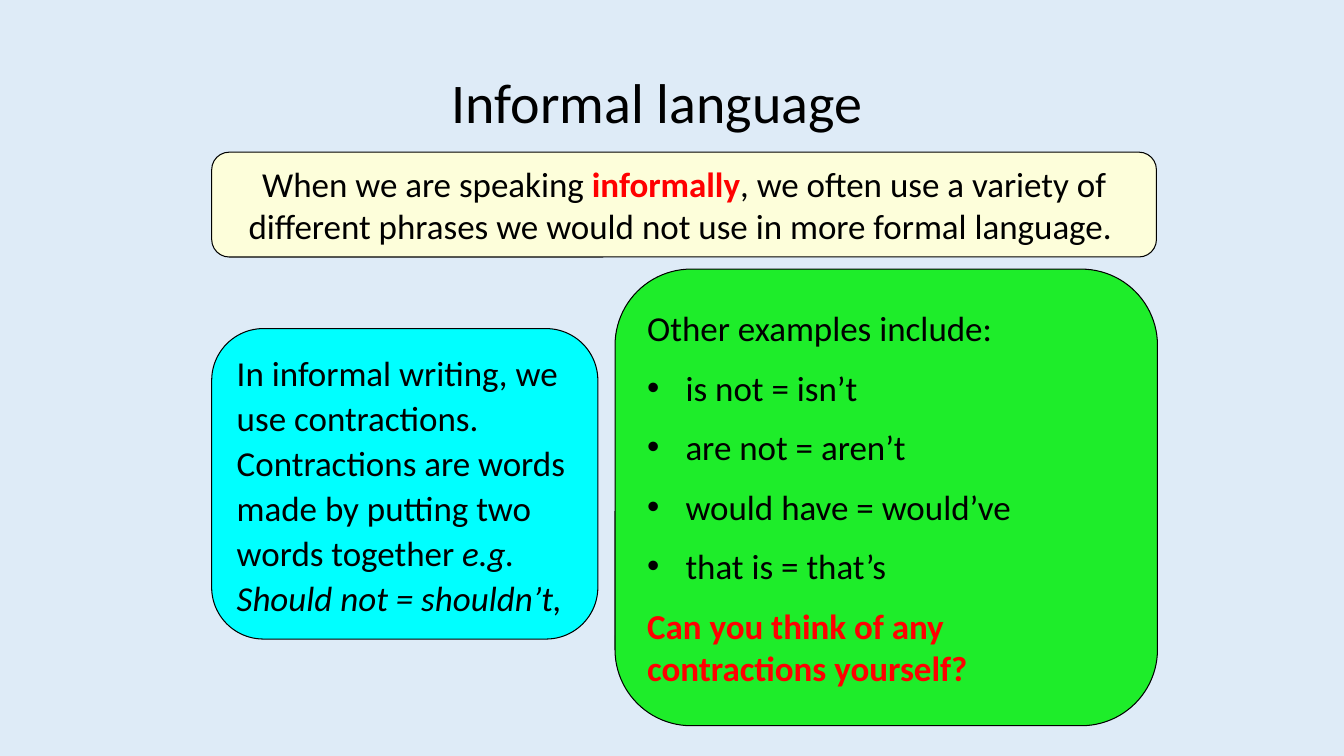
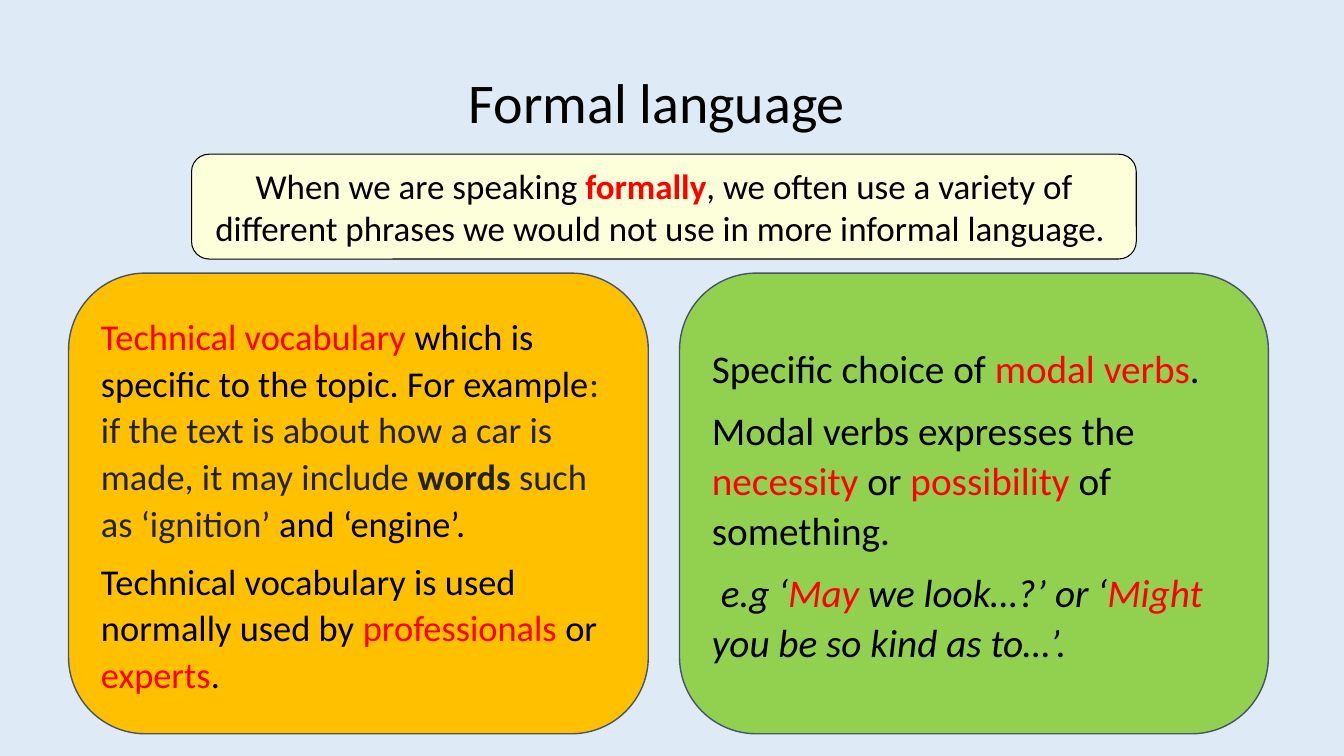
from lxml import etree
from pptx import Presentation
from pptx.dml.color import RGBColor
from pptx.enum import shapes, text
from pptx.oxml import ns
from pptx.util import Inches, Pt

COLOURS = {
    "background": "DEEBF7", "text": "000000", "accent": "FF0000", "grey": "222222",
    "slate": "44546A", "cream": "FDFEDA", "cyan": "00FFFF", "green": "1EED2A",
    "amber": "FFC000", "lime": "92D050",
}
FONT = "Calibri"


def colour(name):
    return RGBColor.from_string(COLOURS[name])


class Deck:
    """Holds the shared style and the slide being built."""

    def __init__(self):
        self.presentation = Presentation()
        self.presentation.slide_width = Inches(13.33)
        self.presentation.slide_height = Inches(7.5)
        background = self.presentation.slide_master.background.fill
        background.solid()
        background.fore_color.rgb = colour("background")
        self.slide = None

    def start_slide(self, title):
        self.slide = self.presentation.slides.add_slide(self.presentation.slide_layouts[6])
        box = self.slide.shapes.add_textbox(
            Inches(2.97), Inches(-0.25), Inches(7.09), Inches(1.64))
        box.text_frame.word_wrap = True
        box.text_frame.vertical_anchor = text.MSO_ANCHOR.BOTTOM
        paragraph = box.text_frame.paragraphs[0]
        paragraph.alignment = text.PP_ALIGN.CENTER
        self.add_runs(paragraph, [title], 40)

    def add_runs(self, paragraph, runs, size):
        """Each run is plain text or (text, colour name, style letters b and i)."""
        for item in runs:
            words, colour_name, style = (item, "text", "") if isinstance(item, str) else item
            run = paragraph.add_run()
            run.text = words
            run.font.name = FONT
            run.font.size = Pt(size)
            run.font.bold = "b" in style
            run.font.italic = "i" in style
            run.font.color.rgb = colour(colour_name)

    def add_bullet(self, paragraph):
        properties = paragraph._p.get_or_add_pPr()
        properties.set("marL", str(Inches(0.38)))
        properties.set("indent", str(-Inches(0.38)))
        etree.SubElement(properties, ns.qn("a:buFont")).set("typeface", "Arial")
        etree.SubElement(properties, ns.qn("a:buChar")).set("char", "•")

    def add_panel(self, place, fill, paragraphs, size=25, line=("text", 0.75), before=0,
                  after=0, spacing=1.0, align=text.PP_ALIGN.LEFT, bullets=()):
        """Add a rounded panel; bullets lists the indexes of bulleted paragraphs."""
        shape = self.slide.shapes.add_shape(
            shapes.MSO_SHAPE.ROUNDED_RECTANGLE, *map(Inches, place))
        shape.shadow.inherit = False
        shape.fill.solid()
        shape.fill.fore_color.rgb = colour(fill)
        shape.line.color.rgb = colour(line[0])
        shape.line.width = Pt(line[1])
        frame = shape.text_frame
        frame.word_wrap = True
        frame.vertical_anchor = text.MSO_ANCHOR.MIDDLE
        for index, runs in enumerate(paragraphs):
            paragraph = frame.add_paragraph() if index else frame.paragraphs[0]
            if index in bullets:
                self.add_bullet(paragraph)
            paragraph.alignment = align
            paragraph.line_spacing = spacing
            paragraph.space_before = Pt(before if index else 0)
            paragraph.space_after = Pt(after)
            self.add_runs(paragraph, runs, size)

    def add_banner(self, left, top, manner, opposite):
        self.add_panel((left, top, 9.37, 1.04), "cream", [[
            "When we are speaking ", (manner, "accent", "b"),
            ", we often use a variety of different phrases we would not use in more "
            f"{opposite} language. ",
        ]], align=text.PP_ALIGN.CENTER)

    def add_topic(self, left, width, fill, size, paragraphs):
        self.add_panel((left, 2.71, width, 4.57), fill, paragraphs, size,
                       line=("slate", 1), after=8, spacing=1.07)


def build_informal(deck):
    deck.start_slide("Informal language")
    deck.add_banner(2.1, 1.51, "informally", "formal")
    deck.add_panel((2.1, 3.26, 3.83, 3.08), "cyan", [[
        "In informal writing, we use contractions. Contractions are words made by "
        "putting two words together ",
        ("e.g. Should not = shouldn’t,", "text", "i"),
    ]], after=8, spacing=1.07)
    examples = ["is not = isn’t", "are not = aren’t", "would have = would’ve",
                "that is = that’s"]
    deck.add_panel((6.1, 2.67, 5.38, 4.53), "green", [
        ["Other examples include:"],
        *[[example] for example in examples],
        [("Can you think of any contractions yourself?", "accent", "b")],
    ], before=12.5, bullets=range(1, len(examples) + 1))


def build_formal(deck):
    deck.start_slide("Formal language")
    deck.add_banner(1.9, 1.53, "formally", "informal")
    deck.add_topic(0.68, 5.75, "amber", 26, [
        [("Technical vocabulary ", "accent", ""),
         "which is specific to the topic. For example",
         (": if the text is about how a car is made, it may include ", "grey", ""),
         ("words", "grey", "b"), (" such as ‘ignition’ ", "grey", ""), "and ‘engine’."],
        ["Technical vocabulary is used normally used by ",
         ("professionals ", "accent", ""), "or ", ("experts", "accent", ""), "."],
    ])
    deck.add_topic(6.74, 5.84, "lime", 28, [
        ["Specific choice of ", ("modal verbs", "accent", ""), "."],
        ["Modal verbs expresses the ", ("necessity ", "accent", ""), "or ",
         ("possibility ", "accent", ""), "of something."],
        [(" e.g ‘", "text", "i"), ("May ", "accent", "i"),
         ("we look…?’ or ‘", "text", "i"), ("Might ", "accent", "i"),
         ("you be so kind as to…’.", "text", "i")],
    ])


def main():
    deck = Deck()
    build_informal(deck)
    build_formal(deck)
    deck.presentation.save("out.pptx")


if __name__ == "__main__":
    main()
